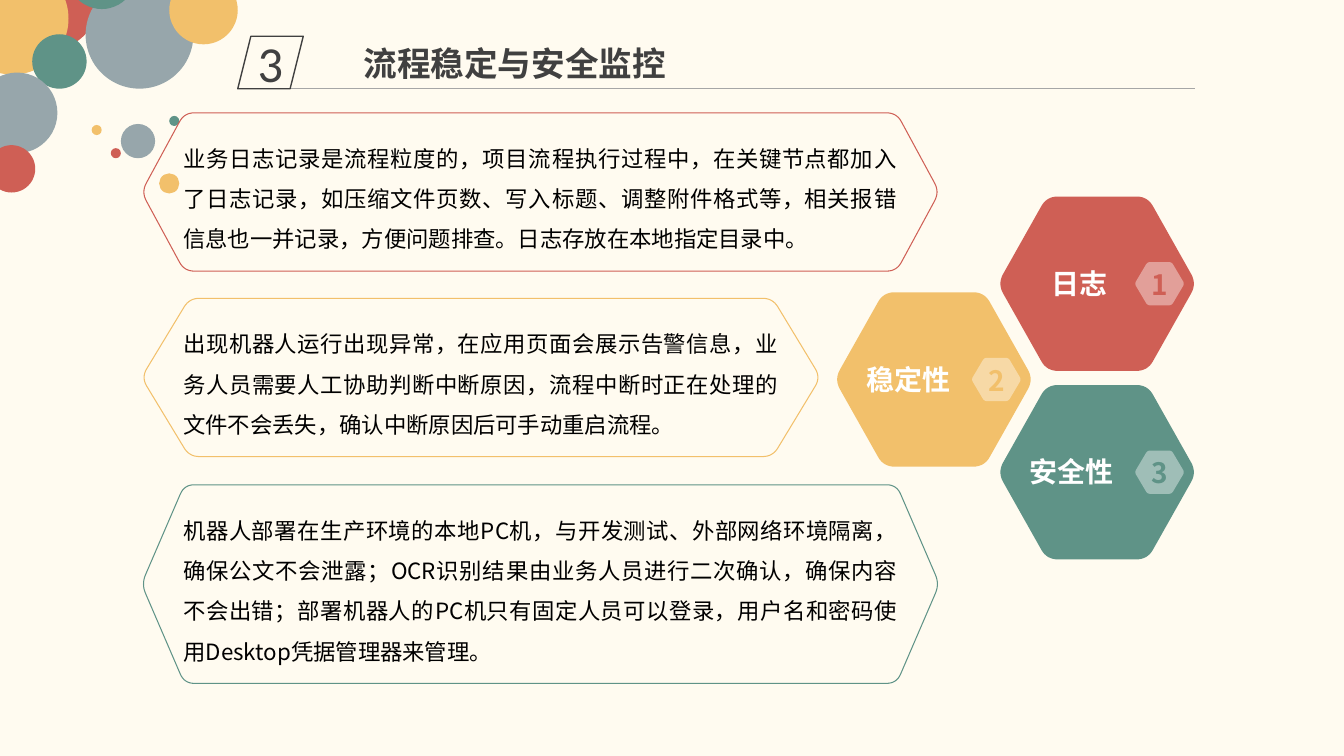
from math import dist

from lxml.etree import SubElement
from pptx import Presentation
from pptx.dml.color import RGBColor
from pptx.enum.shapes import MSO_CONNECTOR, MSO_SHAPE
from pptx.enum.text import MSO_ANCHOR, PP_ALIGN
from pptx.oxml.ns import qn
from pptx.util import Inches, Pt

CREAM = RGBColor(0xFF, 0xFB, 0xF0)
RED = RGBColor(0xCF, 0x5F, 0x55)
YELLOW = RGBColor(0xF2, 0xC0, 0x6B)
GREEN = RGBColor(0x5F, 0x93, 0x87)
GRAY = RGBColor(0x97, 0xA6, 0xAB)
RULE_GRAY = RGBColor(0xA6, 0xA6, 0xA6)
DARK = RGBColor(0x40, 0x40, 0x40)
BLACK = RGBColor(0, 0, 0)
WHITE = RGBColor(255, 255, 255)
CJK_FONT = "Noto Sans CJK SC"

CIRCLES = [
    (0.04, -0.44, 0.93, RED), (-0.43, -0.37, 1.11, YELLOW),
    (0.32, 0.34, 0.54, GREEN), (-0.23, 0.72, 0.8, GRAY),
    (0.85, -0.19, 1.07, GRAY), (0.67, -0.59, 0.68, GREEN),
    (-0.12, 1.44, 0.47, RED), (1.2, 1.23, 0.34, GRAY),
    (1.1, 1.47, 0.1, RED), (0.91, 1.24, 0.1, YELLOW),
    (1.68, 1.15, 0.1, GREEN), (1.58, 1.72, 0.2, YELLOW),
    (1.68, -0.24, 0.68, YELLOW),
]
PANELS = [
    (1.12, 7.87, 1.57, 0.4, RED,
     "业务日志记录是流程粒度的，项目流程执行过程中，在关键节点都加入了日志记录，如压缩文件页数、写入标题、"
     "调整附件格式等，相关报错信息也一并记录，方便问题排查。日志存放在本地指定目录中。"),
    (2.96, 6.69, 1.57, 0.45, YELLOW,
     "出现机器人运行出现异常，在应用页面会展示告警信息，业务人员需要人工协助判断中断原因，"
     "流程中断时正在处理的文件不会丢失，确认中断原因后可手动重启流程。"),
    (4.81, 7.87, 1.97, 0.4, GREEN,
     "机器人部署在生产环境的本地PC机，与开发测试、外部网络环境隔离，确保公文不会泄露；"
     "OCR识别结果由业务人员进行二次确认，确保内容不会出错；部署机器人的PC机只有固定人员可以登录，"
     "用户名和密码使用Desktop凭据管理器来管理。"),
]
BADGES = [
    (9.93, 1.95, 0.16, "日志", RED),
    (8.31, 2.9, 0.08, "稳定性", YELLOW),
    (9.93, 3.82, 0.08, "安全性", GREEN),
]


def tint(color):
    return RGBColor(*(round(channel + 0.4 * (255 - channel)) for channel in color))


def paint(shape, fill=None, line=None, line_width=0.75):
    shape.shadow.inherit = False
    if fill is None:
        shape.fill.background()
    else:
        shape.fill.solid()
        shape.fill.fore_color.rgb = fill
    if line is None:
        shape.line.fill.background()
    else:
        shape.line.color.rgb = line
        shape.line.width = Pt(line_width)


def write(shape, text, size, color, bold=False, font=CJK_FONT,
          align=PP_ALIGN.CENTER, spacing=None, wrap=True):
    frame = shape.text_frame
    frame.text = text
    frame.word_wrap = wrap
    frame.vertical_anchor = MSO_ANCHOR.MIDDLE
    frame.margin_left = frame.margin_right = frame.margin_top = frame.margin_bottom = 0
    paragraph = frame.paragraphs[0]
    paragraph.alignment = align
    if spacing:
        paragraph.line_spacing = spacing
    run = paragraph.runs[0]
    run.font.size = Pt(size)
    run.font.bold = bold
    run.font.color.rgb = color
    run.font.name = font
    SubElement(run._r.get_or_add_rPr(), qn("a:ea")).set("typeface", font)


def add_text(slide, left, top, width, height, text, size, color, **style):
    box = slide.shapes.add_textbox(Inches(left), Inches(top), Inches(width), Inches(height))
    write(box, text, size, color, **style)


def round_corner(before, corner, after, cut, steps=8):
    def toward(target):
        share = cut / dist(corner, target)
        return [c + share * (t - c) for c, t in zip(corner, target)]

    start, end = toward(before), toward(after)
    for step in range(steps + 1):
        t = step / steps
        yield tuple(Inches((1 - t) ** 2 * s + 2 * t * (1 - t) * c + t ** 2 * e)
                    for s, c, e in zip(start, corner, end))


def add_hexagon(slide, left, top, width, height, inset, cut):
    overhang = cut / 4
    right, bottom, middle = left + width, top + height, top + height / 2
    corners = [
        (left + inset, top), (right - inset, top), (right + overhang, middle),
        (right - inset, bottom), (left + inset, bottom), (left - overhang, middle),
    ]
    points = []
    for index, corner in enumerate(corners):
        points += round_corner(corners[index - 1], corner, corners[(index + 1) % 6], cut)
    builder = slide.shapes.build_freeform(*points[0])
    builder.add_line_segments(points[1:], close=True)
    return builder.convert_to_shape()


def add_circles(slide):
    for left, top, size, color in CIRCLES:
        circle = slide.shapes.add_shape(
            MSO_SHAPE.OVAL, Inches(left), Inches(top), Inches(size), Inches(size))
        paint(circle, fill=color)


def add_header(slide, left, top, width, height, number, title):
    bottom = Inches(top + height)
    rule = slide.shapes.add_connector(
        MSO_CONNECTOR.STRAIGHT, Inches(left + 0.48), bottom, Inches(left + width), bottom)
    rule.line.color.rgb = RULE_GRAY
    rule.line.width = Pt(0.5)
    SubElement(rule._element.spPr, qn("a:effectLst"))
    tag = slide.shapes.add_shape(
        MSO_SHAPE.PARALLELOGRAM, Inches(left), Inches(top), Inches(0.65), Inches(height))
    paint(tag, line=DARK, line_width=1)
    write(tag, number, 36, DARK, font="Calibri", wrap=False)
    add_text(slide, left + 1.25, top + 0.02, 4.93, 0.5, title, 24, DARK,
             bold=True, align=PP_ALIGN.LEFT)


def add_panel(slide, left, top, width, height, inset, color, text):
    paint(add_hexagon(slide, left, top, width, height, inset, 0.1), line=color)
    add_text(slide, left + 0.39, top + 0.18, width - 0.78, height - 0.36, text, 16, BLACK,
             align=PP_ALIGN.JUSTIFY, spacing=1.5)


def add_badge(slide, left, top, label_left, label, number, color):
    paint(add_hexagon(slide, left, top, 1.92, 1.73, 0.46, 0.11), fill=color)
    add_text(slide, left + label_left, top + 0.69, 1.26, 0.34, label, 20, WHITE, bold=True)
    paint(add_hexagon(slide, left + 1.34, top + 0.65, 0.48, 0.43, 0.12, 0.03), fill=tint(color))
    add_text(slide, left + 1.45, top + 0.7, 0.27, 0.34, number, 20, color, bold=True)


def main():
    presentation = Presentation()
    presentation.slide_width = Inches(13.34)
    presentation.slide_height = Inches(7.5)
    slide = presentation.slides.add_slide(presentation.slide_layouts[6])
    slide.background.fill.solid()
    slide.background.fill.fore_color.rgb = CREAM
    add_circles(slide)
    add_header(slide, 2.36, 0.36, 9.5, 0.52, "3", "流程稳定与安全监控")
    for panel in PANELS:
        add_panel(slide, 1.43, *panel)
    for number, (left, top, label_left, label, color) in enumerate(BADGES, start=1):
        add_badge(slide, left, top, label_left, label, str(number), color)
    presentation.save("out.pptx")


if __name__ == "__main__":
    main()
